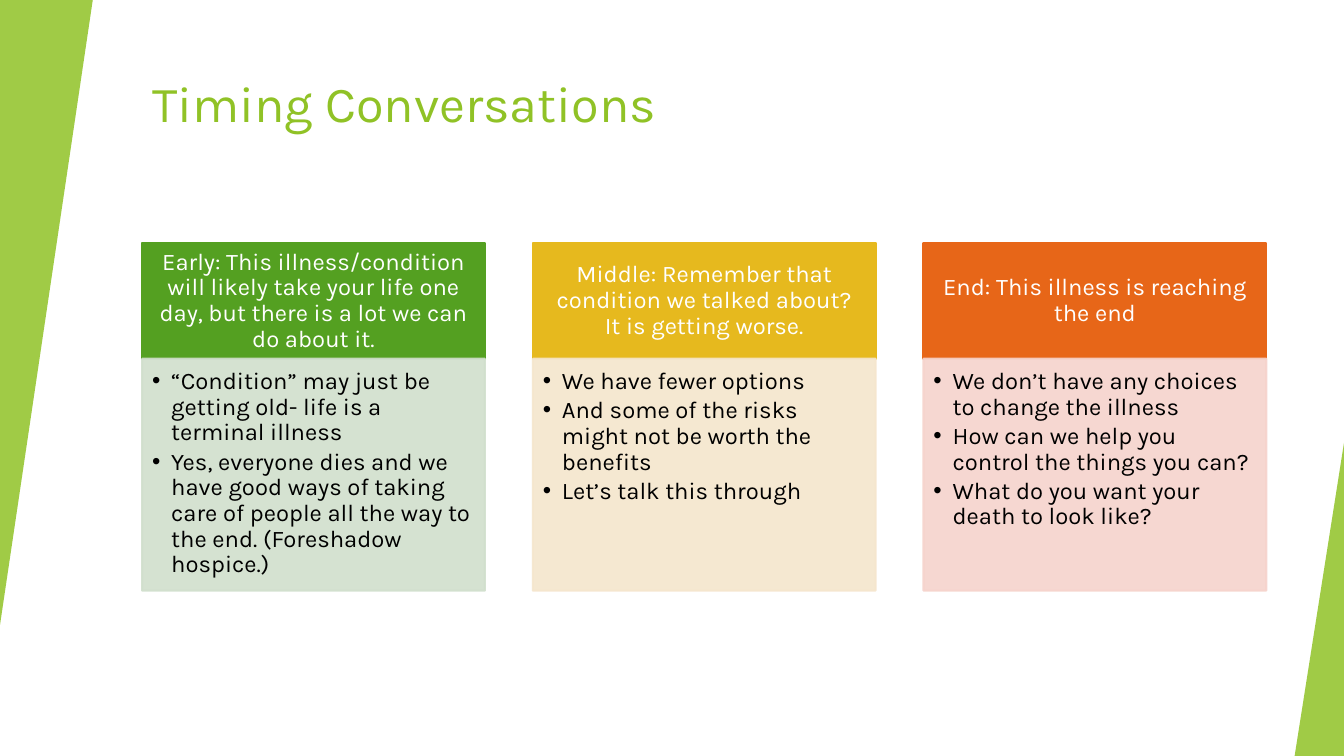
from lxml.etree import SubElement
from pptx import Presentation
from pptx.dml.color import RGBColor
from pptx.enum.shapes import MSO_SHAPE as Shape
from pptx.enum.text import MSO_ANCHOR as Anchor, PP_ALIGN as Align
from pptx.oxml.ns import qn
from pptx.util import Inches, Pt

TITLE = "Timing Conversations"
STAGES = [
    ("Early: This illness/condition will likely take your life one day, "
     "but there is a lot we can do about it.", "54A021", "D1DFCD",
     ["“Condition” may just be getting old- life is a terminal illness",
      "Yes, everyone dies and we have good ways of taking care of people "
      "all the way to the end. (Foreshadow hospice.)"]),
    ("Middle: Remember that condition we talked about? It is getting worse.",
     "E6B91E", "F5E6CD",
     ["We have fewer options",
      "And some of the risks might not be worth the benefits",
      "Let’s talk this through"]),
    ("End: This illness is reaching the end", "E76618", "F6D3CC",
     ["We don’t have any choices to change the illness",
      "How can we help you control the things you can?",
      "What do you want your death to look like?"]),
]
FONT, GREEN = "Karla", "90C226"
WIDTH, HEIGHT = 13.33, 7.5
LEFT, CONTENT_WIDTH = 1.41, 11.15
CARD_WIDTH = 3.4
PITCH = (CONTENT_WIDTH - CARD_WIDTH) / (len(STAGES) - 1)
HEADER_TOP, HEADER_HEIGHT, BODY_HEIGHT = 2.41, 1.15, 2.3
# left, top, width, height, rotation
EDGES = [(0, 0, 0.92, 6.2, 180), (WIDTH - 0.49, HEIGHT - 3.11, 0.49, 3.11, 0)]


def paint(color_format, color, opacity=100):
    """Fill or outline a part, with opacity in percent."""
    color_format.solid()
    color_format.fore_color.rgb = RGBColor.from_string(color)
    if opacity < 100:
        # the fill's solidFill element holds the colour element
        choice = color_format._xPr.find(qn("a:solidFill"))
        SubElement(choice[0], qn("a:alpha")).set("val", str(opacity * 1000))


def add_block(slide, kind, bounds, color, opacity=100, outlined=False):
    block = slide.shapes.add_shape(kind, *map(Inches, bounds))
    block.shadow.inherit = False
    paint(block.fill, color, opacity)
    if outlined:
        block.line.width = Pt(1.5)
        paint(block.line.fill, color, opacity)
    else:
        block.line.fill.background()
    return block


def set_frame(shape, insets, anchor):
    frame = shape.text_frame
    frame.word_wrap = True
    frame.vertical_anchor = anchor
    (frame.margin_left, frame.margin_top,
     frame.margin_right, frame.margin_bottom) = map(Inches, insets)
    return frame


def style(para, size, color, align=Align.LEFT, spacing=1.0, after=0):
    para.alignment = align
    para.line_spacing = spacing
    para.space_after = Pt(after)
    for span in para.runs:
        span.font.name, span.font.size = FONT, Pt(size)
        span.font.color.rgb = RGBColor.from_string(color)


def add_bullet(para):
    properties = para._p.get_or_add_pPr()
    properties.set("marL", str(Inches(0.19)))
    properties.set("indent", str(-Inches(0.19)))
    SubElement(properties, qn("a:buFont")).set("typeface", "Arial")
    SubElement(properties, qn("a:buChar")).set("char", "•")


def add_card(slide, left, heading, color, tint, points):
    header = add_block(slide, Shape.RECTANGLE,
                       (left, HEADER_TOP, CARD_WIDTH, HEADER_HEIGHT), color, outlined=True)
    frame = set_frame(header, (0.13, 0.08, 0.13, 0.08), Anchor.MIDDLE)
    frame.text = heading
    style(frame.paragraphs[0], 17, "FFFFFF", Align.CENTER, 0.9)

    body = add_block(slide, Shape.RECTANGLE,
                     (left, HEADER_TOP + HEADER_HEIGHT, CARD_WIDTH, BODY_HEIGHT),
                     tint, 90, outlined=True)
    frame = set_frame(body, (0.1, 0.1, 0.13, 0.15), Anchor.TOP)
    frame.text = "\n".join(points)
    for para in frame.paragraphs:
        style(para, 17, "000000", spacing=0.9, after=2.5)
        add_bullet(para)


def main():
    deck = Presentation()
    deck.slide_width, deck.slide_height = Inches(WIDTH), Inches(HEIGHT)
    slide = deck.slides.add_slide(deck.slide_layouts[6])

    title = slide.shapes.add_textbox(*map(Inches, (LEFT, 0.67, CONTENT_WIDTH, 1.2)))
    frame = set_frame(title, (0.1, 0.05, 0.1, 0.05), Anchor.TOP)
    frame.text = TITLE
    style(frame.paragraphs[0], 36, GREEN)

    for *bounds, rotation in EDGES:
        edge = add_block(slide, Shape.ISOSCELES_TRIANGLE, bounds, GREEN, 85)
        edge.adjustments[0] = 1
        edge.rotation = rotation

    for column, stage in enumerate(STAGES):
        add_card(slide, LEFT + column * PITCH, *stage)

    deck.save("out.pptx")


if __name__ == "__main__":
    main()
